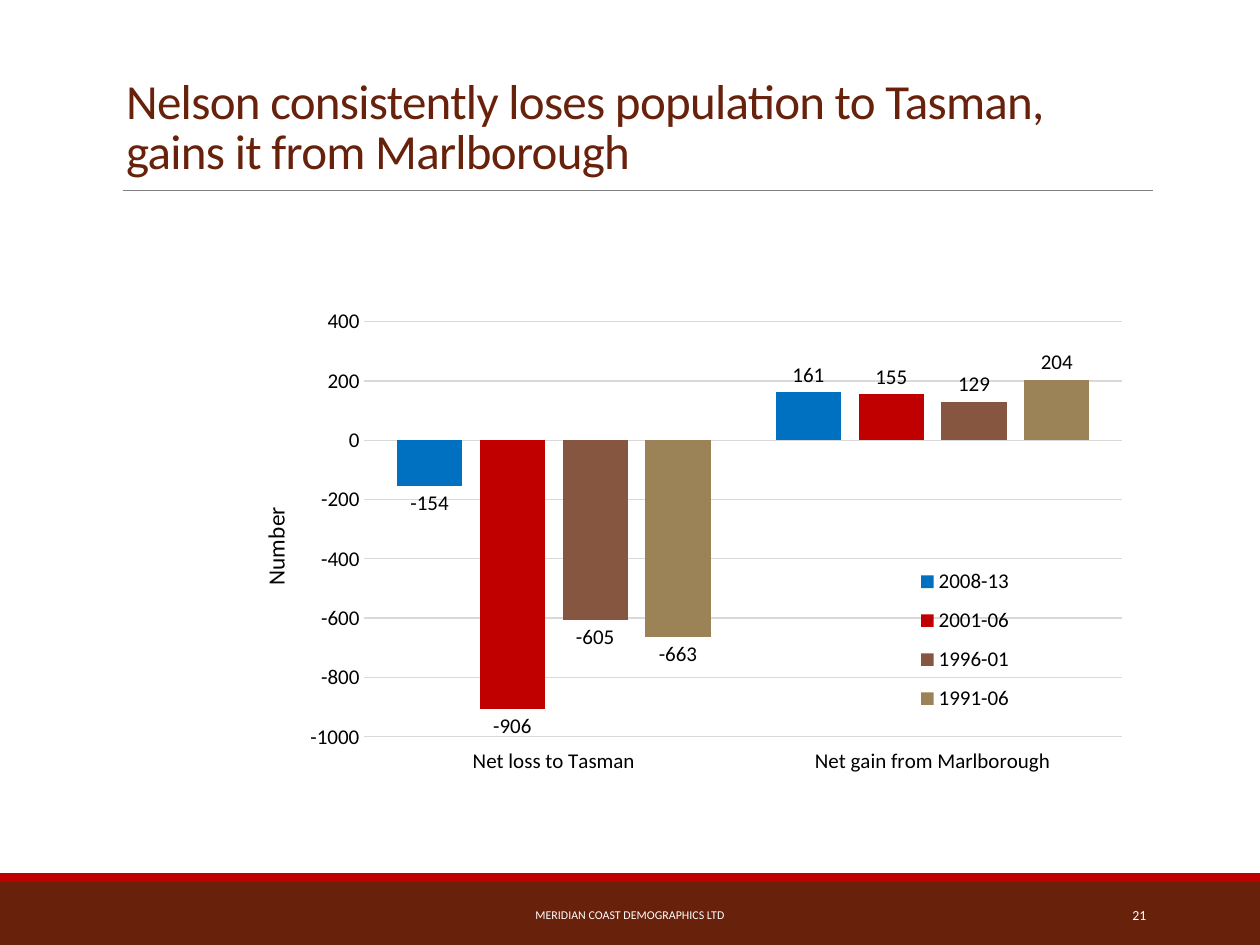
"""Build the slide on Nelson's population exchange with Tasman and Marlborough."""
from lxml import etree
from pptx import Presentation
from pptx.chart.data import CategoryChartData
from pptx.dml.color import RGBColor
from pptx.enum.chart import XL_CHART_TYPE as CT, XL_LABEL_POSITION as LP
from pptx.enum.chart import XL_LEGEND_POSITION as LEG, XL_TICK_LABEL_POSITION as TLP
from pptx.enum.chart import XL_TICK_MARK as TM
from pptx.enum.shapes import MSO_CONNECTOR as CONN, MSO_SHAPE as SHP
from pptx.enum.text import MSO_ANCHOR as ANC, MSO_AUTO_SIZE as AUTO, PP_ALIGN as AL
from pptx.oxml.ns import qn
from pptx.util import Cm, Pt


def style(font, size, color):
    font.name, font.size, font.bold = "Calibri", Pt(size), False
    font.color.rgb = RGBColor.from_string(color)


def place(parent, **fractions):
    for old in parent.findall(qn("c:layout")):
        parent.remove(old)
    layout = etree.Element(qn("c:layout"))
    manual = etree.SubElement(layout, qn("c:manualLayout"))
    if parent.tag == qn("c:plotArea"):
        etree.SubElement(manual, qn("c:layoutTarget"), val="inner")
    for key in ("x", "y"):
        etree.SubElement(manual, qn(f"c:{key}Mode"), val="edge")
    for key, value in fractions.items():
        etree.SubElement(manual, qn(f"c:{key}"), val=str(value))
    parent.insert(0 if parent.tag == qn("c:plotArea") else 1, layout)


BROWN, RED, GRID = "68220C", "C00000", "D9D9D9"

prs = Presentation()
prs.slide_width, prs.slide_height = Cm(25.4), Cm(19.05)
slide = prs.slides.add_slide(prs.slide_layouts[5])
shapes = slide.shapes

for top, height, color in [(17.78, 1.27, BROWN), (17.6, 0.18, RED)]:
    sp = shapes.add_shape(SHP.RECTANGLE, 0, Cm(top), prs.slide_width, Cm(height))
    sp.shadow.inherit = False
    sp.fill.solid()
    sp.fill.fore_color.rgb = RGBColor.from_string(color)
    sp.line.fill.background()

rule = shapes.add_connector(CONN.STRAIGHT, Cm(2.47), Cm(3.84), Cm(23.25), Cm(3.84))
rule.line.color.rgb = RGBColor.from_string("808080")
rule.line.width = Pt(0.5)
etree.SubElement(rule._element.spPr, qn("a:effectLst"))

title = shapes.title
title.left, title.top, title.width, title.height = Cm(2.29), Cm(0.79), Cm(20.02), Cm(2.95)
tf = title.text_frame
tf.auto_size, tf.vertical_anchor, tf.word_wrap = AUTO.NONE, ANC.BOTTOM, True
p = tf.paragraphs[0]
p.alignment, p.line_spacing = AL.LEFT, 0.85
r = p.add_run()
r.text = "Nelson consistently loses population to Tasman, gains it from Marlborough"
style(r.font, 28, BROWN)
r.font._element.set("spc", "-40")

data = CategoryChartData()
data.categories = ["Net loss to Tasman", "Net gain from Marlborough"]
periods = [
    ("2008-13", (-154, 161), "0070C0"),
    ("2001-06", (-906, 155), RED),
    ("1996-01", (-605, 129), "865640"),
    ("1991-06", (-663, 204), "9B8357"),
]
for name, values, color in periods:
    data.add_series(name, values)
chart = shapes.add_chart(
    CT.COLUMN_CLUSTERED, Cm(4.39), Cm(4.7), Cm(18.95), Cm(11.81), data
).chart
style(chart.font, 12, "000000")
chart.has_title = False
place(chart._chartSpace.chart.plotArea, x=0.156, y=0.151, w=0.806, h=0.709)

plot = chart.plots[0]
plot.gap_width, plot.overlap, plot.vary_by_categories = 100, -27, False
for series, (name, values, color) in zip(plot.series, periods):
    series.invert_if_negative = False
    series.format.fill.solid()
    series.format.fill.fore_color.rgb = RGBColor.from_string(color)
    labels = series.data_labels
    labels.show_value, labels.position = True, LP.OUTSIDE_END
    style(labels.font, 12, "000000")

cat, val = chart.category_axis, chart.value_axis
val.minimum_scale, val.maximum_scale, val.major_unit = -1000, 400, 200
val.has_major_gridlines = True
for axis in (cat, val):
    axis.major_tick_mark = axis.minor_tick_mark = TM.NONE
    style(axis.tick_labels.font, 12, "000000")
for line in (cat.format.line, val.major_gridlines.format.line):
    line.color.rgb = RGBColor.from_string(GRID)
    line.width = Pt(0.75)
cat.tick_label_position = TLP.LOW
val.format.line.fill.background()
r = val.axis_title.text_frame.paragraphs[0].add_run()
r.text = "Number"
style(r.font, 13.3, "000000")
body = val.axis_title.text_frame._txBody.bodyPr
body.set("rot", "-5400000")
body.set("vert", "horz")
place(val.axis_title._element, x=0.04, y=0.46)

chart.has_legend = True
legend = chart.legend
legend.position, legend.include_in_layout = LEG.RIGHT, False
style(legend.font, 12, "000000")
place(legend._element, x=0.72, y=0.55, w=0.15, h=0.29)

footers = [
    (7.67, 10.06, AL.CENTER, "MERIDIAN COAST DEMOGRAPHICS LTD", 6.8),
    (20.62, 2.74, AL.RIGHT, "21", 7.9),
]
for left, width, align, text, size in footers:
    tf = shapes.add_textbox(Cm(left), Cm(17.93), Cm(width), Cm(1.02)).text_frame
    tf.word_wrap, tf.vertical_anchor = True, ANC.MIDDLE
    p = tf.paragraphs[0]
    p.alignment = align
    r = p.add_run()
    r.text = text
    style(r.font, size, "FFFFFF")

prs.save("out.pptx")
